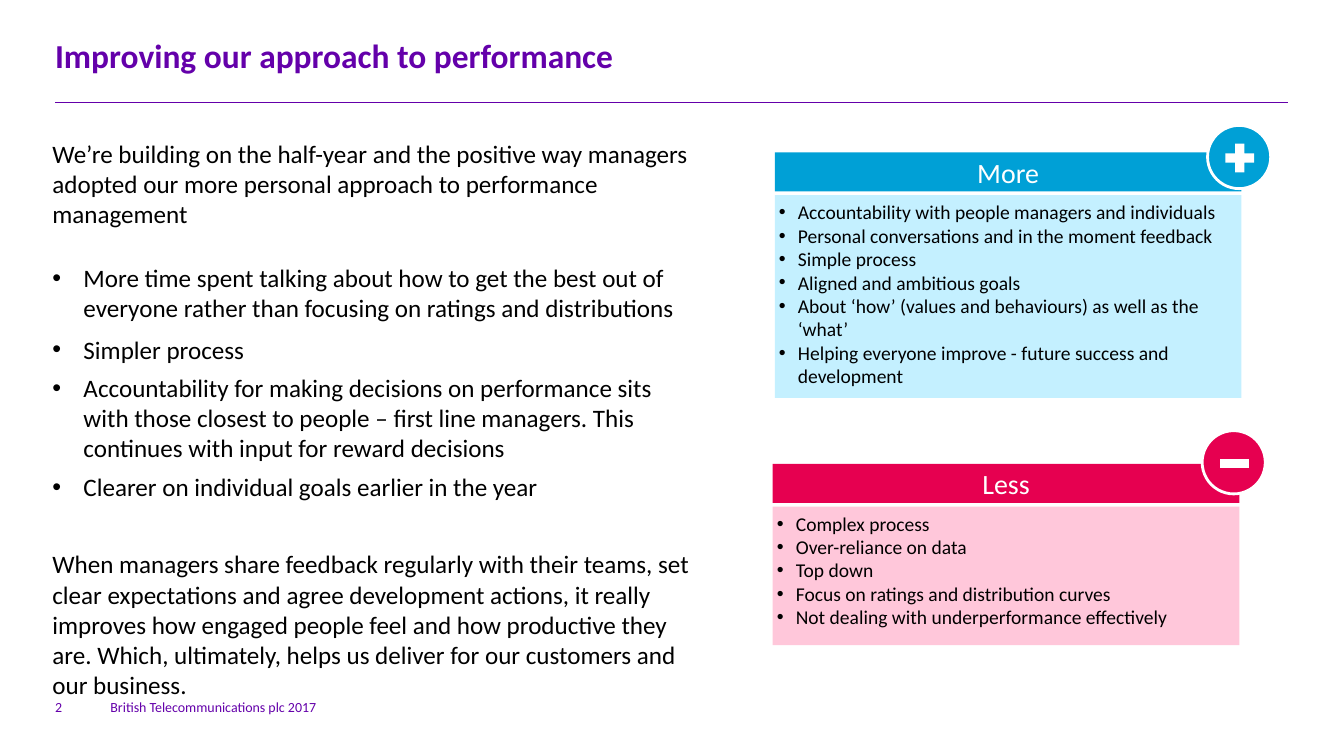
from lxml.etree import SubElement
from pptx import Presentation
from pptx.dml.color import RGBColor
from pptx.enum.shapes import MSO_CONNECTOR, MSO_SHAPE
from pptx.enum.text import MSO_ANCHOR, PP_ALIGN
from pptx.oxml.ns import qn
from pptx.util import Inches, Pt

SLIDE_WIDTH, SLIDE_HEIGHT = Inches(13.39), Inches(7.48)
FONT = "Calibri"
COLORS = {
    "purple": "6400AA", "black": "000000", "white": "FFFFFF",
    "blue": "00A0D6", "light blue": "C4F0FF",
    "red": "E60050", "pink": "FFC7DA",
}
MARGIN_LEFT, CONTENT_WIDTH = 4.1, 91.7
PANEL_WIDTH, HEADER_HEIGHT, PANEL_STEP = 34.73, 5.2, 5.7
BADGE_SIZE, SYMBOL_SIZE, SYMBOL_INSET = (4.7, 8.42), (2.9, 5.2), (0.95, 1.74)

INTRO = ("We’re building on the half-year and the positive way managers "
         "adopted our more personal approach to performance management")
CHANGES = [
    "More time spent talking about how to get the best out of everyone "
    "rather than focusing on ratings and distributions",
    "Simpler process",
    "Accountability for making decisions on performance sits with those closest "
    "to people – first line managers. This continues with input for reward decisions",
    "Clearer on individual goals earlier in the year",
]
CLOSING = ("When managers share feedback regularly with their teams, set clear "
           "expectations and agree development actions, it really improves how "
           "engaged people feel and how productive they are. Which, ultimately, "
           "helps us deliver for our customers and our business.")
MORE = [
    "Accountability with people managers and individuals",
    "Personal conversations and in the moment feedback",
    "Simple process",
    "Aligned and ambitious goals",
    "About ‘how’ (values and behaviours) as well as the ‘what’",
    "Helping everyone improve - future success and development",
]
LESS = [
    "Complex process",
    "Over-reliance on data",
    "Top down",
    "Focus on ratings and distribution curves",
    "Not dealing with underperformance effectively",
]


def color(name):
    return RGBColor.from_string(COLORS[name])


def across(percent):
    return round(SLIDE_WIDTH * percent / 100)


def down(percent):
    return round(SLIDE_HEIGHT * percent / 100)


def box(left, top, width, height):
    """Turn percentages of the slide's size into lengths."""
    return across(left), down(top), across(width), down(height)


def set_frame(text_frame, anchor=MSO_ANCHOR.TOP, inset_x=0, inset_y=0):
    text_frame.word_wrap = True
    text_frame.vertical_anchor = anchor
    text_frame.margin_left = text_frame.margin_right = Inches(inset_x)
    text_frame.margin_top = text_frame.margin_bottom = Inches(inset_y)


def format_paragraph(paragraph, size, color_name, bold=False, align=PP_ALIGN.LEFT):
    paragraph.alignment = align
    for run in paragraph.runs:
        run.font.name = FONT
        run.font.size = Pt(size)
        run.font.bold = bold
        run.font.color.rgb = color(color_name)


def add_bullet(paragraph, indent):
    properties = paragraph._p.get_or_add_pPr()
    properties.set("marL", str(Inches(indent)))
    properties.set("indent", str(-Inches(indent)))
    SubElement(properties, qn("a:buFont")).set("typeface", "Arial")
    SubElement(properties, qn("a:buChar")).set("char", "•")


def add_text(slide, place, text, size, color_name, anchor=MSO_ANCHOR.TOP):
    text_frame = slide.shapes.add_textbox(*place).text_frame
    set_frame(text_frame, anchor)
    text_frame.text = text
    for paragraph in text_frame.paragraphs:
        format_paragraph(paragraph, size, color_name)
    return text_frame


def add_plain_shape(slide, kind, place, fill):
    shape = slide.shapes.add_shape(kind, *place)
    shape.shadow.inherit = False
    shape.fill.solid()
    shape.fill.fore_color.rgb = color(fill)
    shape.line.fill.background()
    return shape


def add_title(slide, text):
    title = slide.shapes.title
    title.left, title.top, title.width, title.height = box(
        MARGIN_LEFT, 4.7, CONTENT_WIDTH, 6.3)
    set_frame(title.text_frame)
    title.text_frame.text = text
    format_paragraph(title.text_frame.paragraphs[0], 24, "purple", bold=True)


def add_rule(slide):
    rule = slide.shapes.add_connector(
        MSO_CONNECTOR.STRAIGHT, across(MARGIN_LEFT), down(13.64),
        across(MARGIN_LEFT + CONTENT_WIDTH), down(13.64))
    rule.line.color.rgb = color("purple")
    rule.line.width = Pt(0.25)
    SubElement(rule._element.spPr, qn("a:effectLst"))


def add_story(slide):
    text = "\n".join([INTRO, *CHANGES, CLOSING])
    text_frame = add_text(slide, box(3.9, 18.45, 48.4, 72.6), text, 18, "black")
    intro, *changes, closing = text_frame.paragraphs
    intro.space_after = Pt(24)
    for paragraph in changes:
        add_bullet(paragraph, 0.31)
        paragraph.space_after = Pt(6)
    changes[1].line_spacing = 1.1
    closing.space_before = Pt(28)


def add_panel(slide, left, top, height, heading, items, strong, pale):
    header = add_plain_shape(slide, MSO_SHAPE.RECTANGLE,
                             box(left, top, PANEL_WIDTH, HEADER_HEIGHT), strong)
    set_frame(header.text_frame, MSO_ANCHOR.MIDDLE, 0.04, 0.05)
    header.text_frame.text = heading
    format_paragraph(header.text_frame.paragraphs[0], 20, "white",
                     align=PP_ALIGN.CENTER)

    body = add_plain_shape(slide, MSO_SHAPE.RECTANGLE,
                           box(left, top + PANEL_STEP, PANEL_WIDTH, height), pale)
    set_frame(body.text_frame, MSO_ANCHOR.TOP, 0.04, 0.05)
    body.text_frame.text = "\n".join(items)
    for paragraph in body.text_frame.paragraphs:
        add_bullet(paragraph, 0.19)
        format_paragraph(paragraph, 14, "black")


def add_badge(slide, left, top, symbol, fill):
    circle = add_plain_shape(slide, MSO_SHAPE.OVAL, box(left, top, *BADGE_SIZE), fill)
    circle.line.color.rgb = color("white")
    circle.line.width = Pt(2)
    inset_x, inset_y = SYMBOL_INSET
    add_plain_shape(slide, symbol,
                    box(left + inset_x, top + inset_y, *SYMBOL_SIZE), "white")


def main():
    presentation = Presentation()
    presentation.slide_width, presentation.slide_height = SLIDE_WIDTH, SLIDE_HEIGHT
    slide = presentation.slides.add_slide(presentation.slide_layouts[5])

    add_title(slide, "Improving our approach to performance")
    add_rule(slide)
    add_story(slide)
    add_panel(slide, 57.5, 61.76, 18.45, "Less", LESS, "red", "pink")
    add_panel(slide, 57.65, 20.3, 27, "More", MORE, "blue", "light blue")
    add_badge(slide, 89.85, 16.7, MSO_SHAPE.MATH_PLUS, "blue")
    add_badge(slide, 89.45, 57.35, MSO_SHAPE.MATH_MINUS, "red")
    add_text(slide, box(MARGIN_LEFT, 91.3, 2.9, 3.9), "2", 10, "purple",
             MSO_ANCHOR.BOTTOM)
    add_text(slide, box(8.22, 91.3, 17.6, 3.9), "British Telecommunications plc 2017",
             10, "purple", MSO_ANCHOR.BOTTOM)
    presentation.save("out.pptx")


if __name__ == "__main__":
    main()
